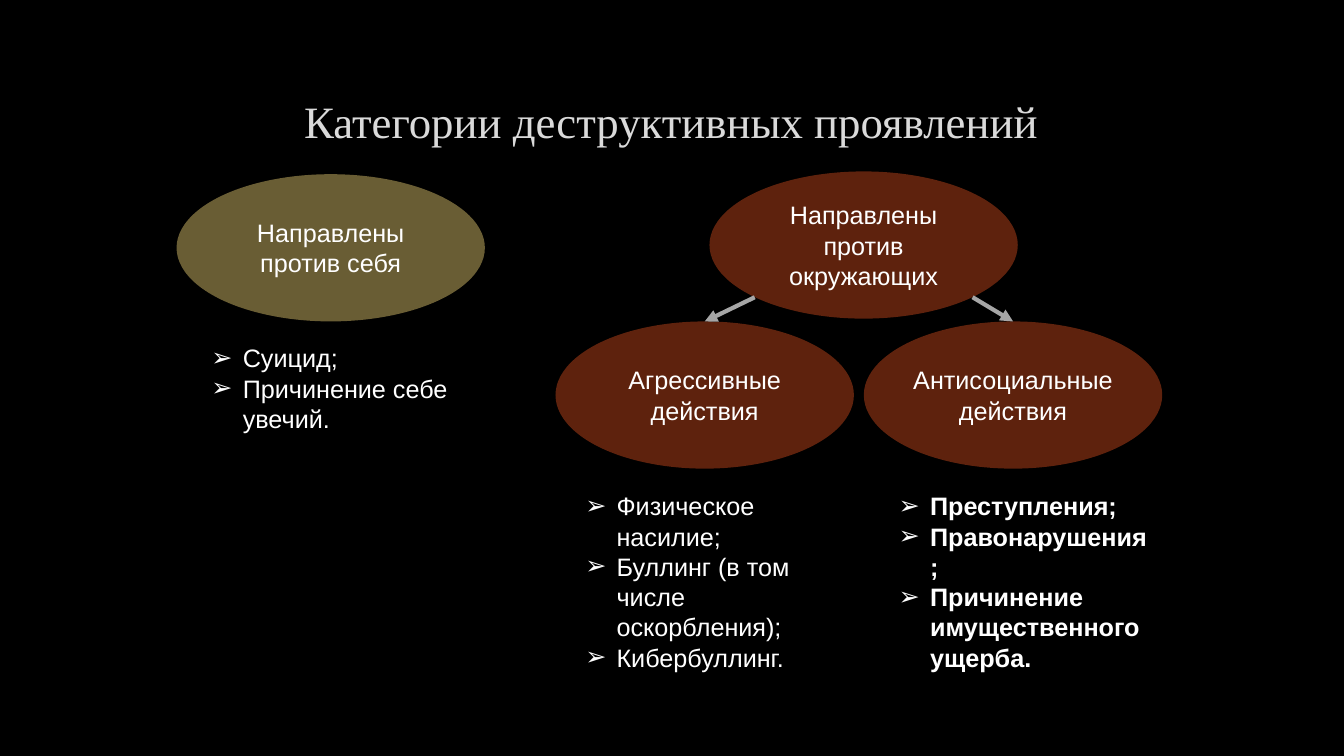
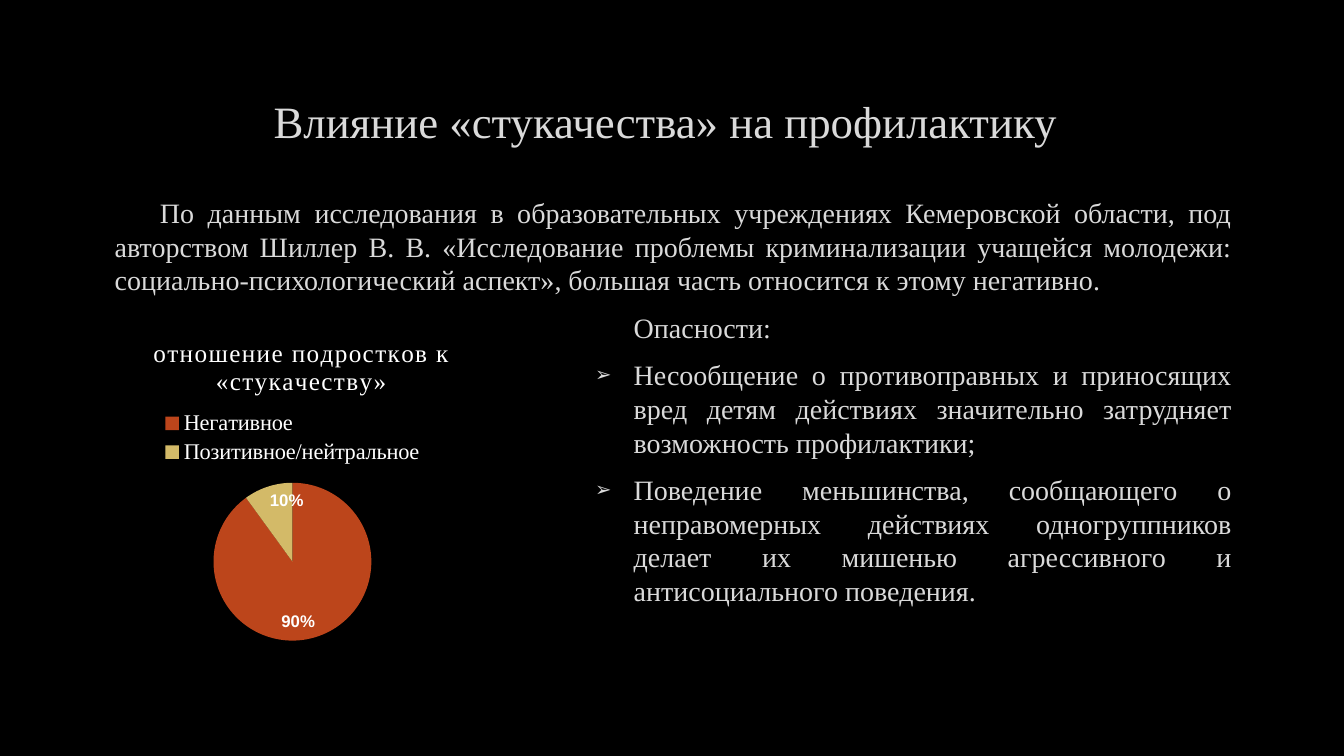
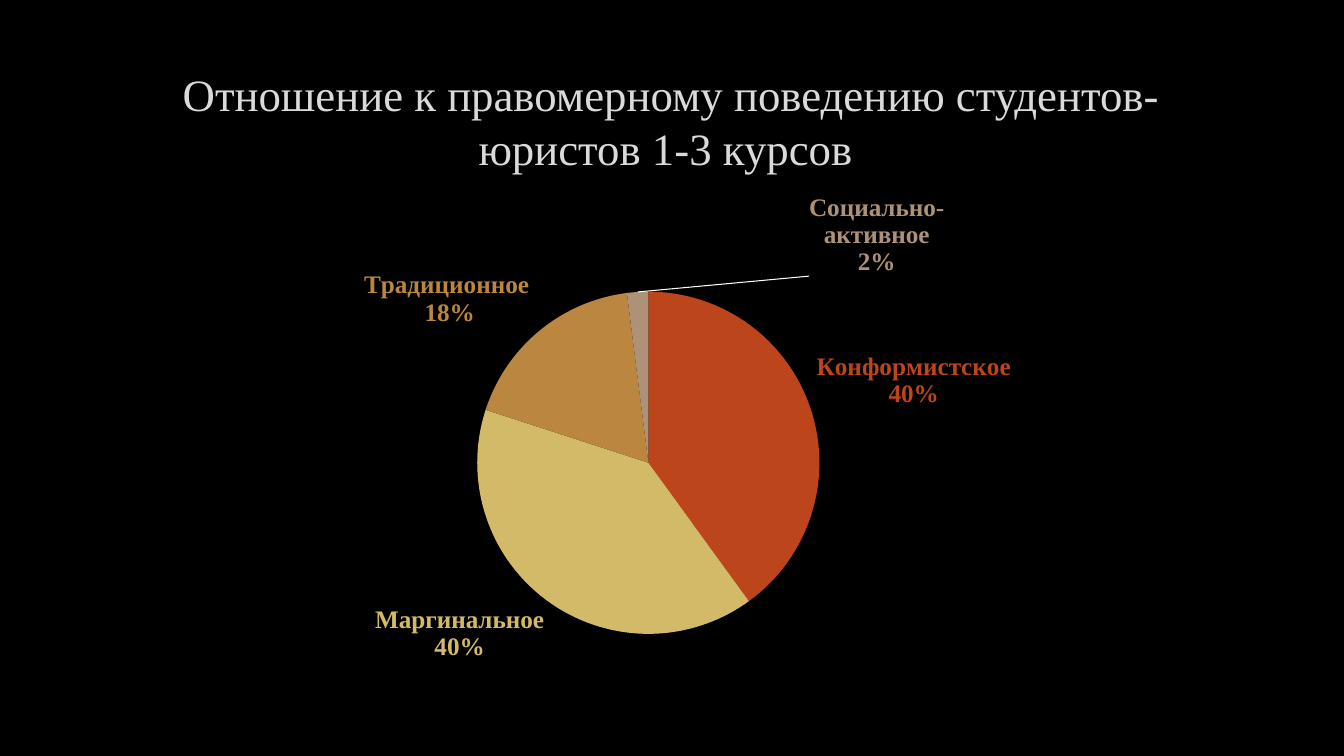
import lxml.etree
import pptx
import pptx.chart.data
import pptx.dml.color
import pptx.enum.chart
import pptx.enum.shapes
import pptx.enum.text
import pptx.oxml.ns
import pptx.util

Cm, Pt, qn = pptx.util.Cm, pptx.util.Pt, pptx.oxml.ns.qn
ALIGN = pptx.enum.text.PP_ALIGN
LABEL = pptx.enum.chart.XL_LABEL_POSITION

COLORS = {
    "black": "000000", "white": "FFFFFF", "text": "DADADA", "arrow": "A6A6A6",
    "rust": "BC451B", "sand": "D3BA68", "ochre": "BB8640", "taupe": "AD9277",
}
SERIF, SANS = "Times New Roman", "Arial"
BULLET = "➢"

# Lengths are in centimetres: left, top, width, height.
TITLE_BOX = (2.54, 1.7, 28.75, 2.69)
TITLES = (
    "Категории деструктивных проявлений",
    "Влияние «стукачества» на профилактику ",
    "Отношение к правомерному поведению студентов-юристов 1-3 курсов ",
)
OVALS = {
    "others": ("Направлены против окружающих", "rust", (17.88, 4.32, 7.77, 3.71)),
    "self": ("Направлены против себя", "sand", (4.45, 4.39, 7.77, 3.71)),
    "aggressive": ("Агрессивные действия", "rust", (14, 8.1, 7.52, 3.71)),
    "antisocial": ("Антисоциальные действия", "rust", (21.77, 8.1, 7.52, 3.71)),
}
ARROWS = (((19.02, 7.49), "aggressive"), ((24.51, 7.49), "antisocial"))
EXAMPLES = (
    ((14.5, 12.24, 6.5, 4.88), False,
     ("Физическое насилие;", "Буллинг (в том числе оскорбления);", "Кибербуллинг.")),
    ((22.4, 12.24, 6.88, 4.88), True,
     ("Преступления;", "Правонарушения;", "Причинение имущественного ущерба.")),
    ((5.08, 8.51, 6.5, 2.57), False, ("Суицид;", "Причинение себе увечий.")),
)
BODY_BOX = (2.54, 4.8, 28.75, 11.28)
BODY = (  # text, left margin, first-line indent, bulleted
    ("По данным исследования в образовательных учреждениях Кемеровской области, "
     "под авторством Шиллер В. В. «Исследование проблемы криминализации учащейся "
     "молодежи: социально-психологический аспект», большая часть относится к этому "
     "негативно.", 0.1, 1.14, False),
    ("Опасности:", 13.18, 0, False),
    ("Несообщение о противоправных и приносящих вред детям действиях значительно "
     "затрудняет возможность профилактики;", 13.18, -0.97, True),
    ("Поведение меньшинства, сообщающего о неправомерных действиях одногруппников "
     "делает их мишенью агрессивного и антисоциального поведения.",
     13.18, -0.97, True),
)
ATTITUDE_BOX = (0.74, 7.95, 13.26, 8.56)
ATTITUDE_TITLE = ("отношение подростков к", "«стукачеству»")
ATTITUDE = (("Негативное", 90, "rust"), ("Позитивное/нейтральное", 10, "sand"))
LAWFUL_BOX = (2.54, 4.85, 28.75, 12.5)
LAWFUL = (
    ("Конформистское", 40, "rust"), ("Маргинальное", 40, "sand"),
    ("Традиционное ", 18, "ochre"), ("Социально-активное", 2, "taupe"),
)


def rgb(name):
    return pptx.dml.color.RGBColor.from_string(COLORS[name])


def cm(lengths):
    return [Cm(length) for length in lengths]


def add_xml(parent, tag, **attributes):
    return lxml.etree.SubElement(parent, qn(tag), attributes)


def style_font(font, face, size, color, bold=False):
    font.name, font.size, font.bold = face, Pt(size), bold
    font.color.rgb = rgb(color)


def add_span(para, text, *style):
    span = para.add_run()
    span.text = text
    style_font(span.font, *style)
    return span


def next_para(frame, index):
    return frame.add_paragraph() if index else frame.paragraphs[0]


def indent(para, margin, first, bulleted, bullet_percent=100):
    props = para._p.get_or_add_pPr()
    props.set("marL", str(Cm(margin)))
    props.set("indent", str(Cm(first)))
    if bulleted:
        add_xml(props, "a:buSzPct", val=str(bullet_percent * 1000))
        add_xml(props, "a:buFont", typeface=SANS)
        add_xml(props, "a:buChar", char=BULLET)


def add_page(deck, title):
    page = deck.slides.add_slide(deck.slide_layouts[5])
    holder = page.shapes.title
    holder.left, holder.top, holder.width, holder.height = cm(TITLE_BOX)
    frame = holder.text_frame
    frame.vertical_anchor = pptx.enum.text.MSO_ANCHOR.MIDDLE
    frame.paragraphs[0].alignment = ALIGN.CENTER
    add_span(frame.paragraphs[0], title, SERIF, 32, "text")
    return page


def add_text_frame(page, box):
    frame = page.shapes.add_textbox(*cm(box)).text_frame
    frame.word_wrap = True
    return frame


def add_oval(page, text, color, box):
    oval = page.shapes.add_shape(pptx.enum.shapes.MSO_SHAPE.OVAL, *cm(box))
    oval.shadow.inherit = False
    oval.line.fill.background()
    oval.fill.solid()
    oval.fill.fore_color.rgb = rgb(color)
    add_xml(oval.fill._xPr.find(".//" + qn("a:srgbClr")), "a:alpha", val="50000")
    frame = oval.text_frame
    frame.word_wrap = True
    frame.vertical_anchor = pptx.enum.text.MSO_ANCHOR.MIDDLE
    frame.margin_left = frame.margin_right = frame.margin_top = frame.margin_bottom = 0
    frame.paragraphs[0].alignment = ALIGN.CENTER
    add_span(frame.paragraphs[0], text, SANS, 18, "white")
    return oval


def add_arrow(page, start, target):
    """Draw an arrow from a point to the top of the target shape."""
    arrow = page.shapes.add_connector(
        pptx.enum.shapes.MSO_CONNECTOR.STRAIGHT, *cm(start), *cm(start))
    arrow.end_connect(target, 0)
    arrow.line.color.rgb = rgb("arrow")
    arrow.line.width = Pt(3)
    add_xml(arrow.line._get_or_add_ln(), "a:tailEnd", type="triangle")
    add_xml(arrow._element.spPr, "a:effectLst")


def set_layout(parent, index, **values):
    """Give a chart part a manual layout, as fractions of the chart."""
    for old in parent.findall(qn("c:layout")):
        parent.remove(old)
    layout = lxml.etree.Element(qn("c:layout"))
    manual = add_xml(layout, "c:manualLayout")
    for tag, value in values.items():
        add_xml(manual, "c:" + tag, val=str(value))
    parent.insert(index, layout)


def add_pie(page, box, slices, plot_box):
    data = pptx.chart.data.CategoryChartData(number_format="General")
    data.categories = [name for name, _, _ in slices]
    data.add_series("Series 1", [value for _, value, _ in slices])
    chart = page.shapes.add_chart(
        pptx.enum.chart.XL_CHART_TYPE.PIE, *cm(box), data).chart
    style_font(chart.font, SANS, 10, "white")
    chart.has_title = chart.has_legend = False
    plot = chart.plots[0]
    plot.vary_by_categories = True
    for index, (_, _, color) in enumerate(slices):
        fill = plot.series[0].points[index].format.fill
        fill.solid()
        fill.fore_color.rgb = rgb(color)
    x, y, w, h = plot_box
    set_layout(chart._chartSpace.find(".//" + qn("c:plotArea")), 0,
               layoutTarget="inner", xMode="edge", yMode="edge", x=x, y=y, w=w, h=h)
    labels = plot.series[0].data_labels
    labels.show_value, labels.show_percentage = False, True
    labels.number_format, labels.number_format_is_linked = "0%", False
    return chart, labels


def build_categories(page):
    ovals = {key: add_oval(page, *oval) for key, oval in OVALS.items()}
    for start, key in ARROWS:
        add_arrow(page, start, ovals[key])
    for box, bold, items in EXAMPLES:
        frame = add_text_frame(page, box)
        for index, item in enumerate(items):
            para = next_para(frame, index)
            indent(para, 0.79, -0.79, True)
            add_span(para, item, SANS, 18, "white", bold)


def build_influence(page):
    frame = add_text_frame(page, BODY_BOX)
    for index, (text, margin, first, bulleted) in enumerate(BODY):
        para = next_para(frame, index)
        para.alignment = ALIGN.JUSTIFY
        para.space_before, para.space_after = Pt(4), Pt(6)
        indent(para, margin, first, bulleted, 70)
        add_span(para, text, SERIF, 20, "text")

    chart, labels = add_pie(page, ATTITUDE_BOX, ATTITUDE, (0.35, 0.49, 0.3, 0.47))
    style_font(labels.font, SANS, 12, "white", True)
    labels.position = LABEL.INSIDE_END
    chart.has_title = True
    title = chart.chart_title
    for index, line in enumerate(ATTITUDE_TITLE):
        para = next_para(title.text_frame, index)
        para.alignment = ALIGN.CENTER
        span = add_span(para, line, SERIF, 18, "white")
        span.font._element.set("spc", "100")
    set_layout(title._element, 1, xMode="edge", yMode="edge", x=0.23, y=0.06)
    chart.has_legend = True
    legend = chart.legend
    legend.position = pptx.enum.chart.XL_LEGEND_POSITION.TOP
    legend.include_in_layout = False
    style_font(legend.font, SERIF, 16, "white")
    set_layout(legend._element, 1, xMode="edge", yMode="edge",
               x=0.25, y=0.27, w=0.5, h=0.18)


def show_name_and_percent(label):
    """Switch a label element to category name above percentage."""
    for tag, value in (("showVal", "0"), ("showCatName", "1"), ("showPercent", "1")):
        label.find(qn("c:" + tag)).set("val", value)
    separator = lxml.etree.Element(qn("c:separator"))
    separator.text = "\n"
    label.find(qn("c:showPercent")).getnext().addnext(separator)


def build_lawfulness(page):
    chart, labels = add_pie(page, LAWFUL_BOX, LAWFUL, (0.33, 0.2, 0.3, 0.69))
    style_font(labels.font, SERIF, 18, "rust", True)
    labels.show_category_name = True
    labels.position = LABEL.OUTSIDE_END
    series = chart.plots[0].series[0]
    for index, (_, _, color) in enumerate(LAWFUL):
        label = series.points[index].data_label
        style_font(label.font, SERIF, 18, color, True)
        label.position = LABEL.OUTSIDE_END
    point_labels = series._element.findall(".//" + qn("c:dLbl"))
    for element in point_labels:
        show_name_and_percent(element)
    set_layout(point_labels[-1], 1, x=0.21, y=-0.02)
    group = series._element.find(qn("c:dLbls"))
    for old in group.findall(qn("c:showLeaderLines")):
        group.remove(old)
    add_xml(group, "c:showLeaderLines", val="1")
    line = add_xml(add_xml(add_xml(group, "c:leaderLines"), "c:spPr"), "a:ln", w="9525")
    add_xml(add_xml(line, "a:solidFill"), "a:srgbClr", val=COLORS["white"])


def main():
    deck = pptx.Presentation()
    deck.slide_width, deck.slide_height = Cm(33.87), Cm(19.05)
    background = deck.slide_master.background.fill
    background.solid()
    background.fore_color.rgb = rgb("black")
    builders = (build_categories, build_influence, build_lawfulness)
    for title, build in zip(TITLES, builders):
        build(add_page(deck, title))
    deck.save("out.pptx")


if __name__ == "__main__":
    main()
